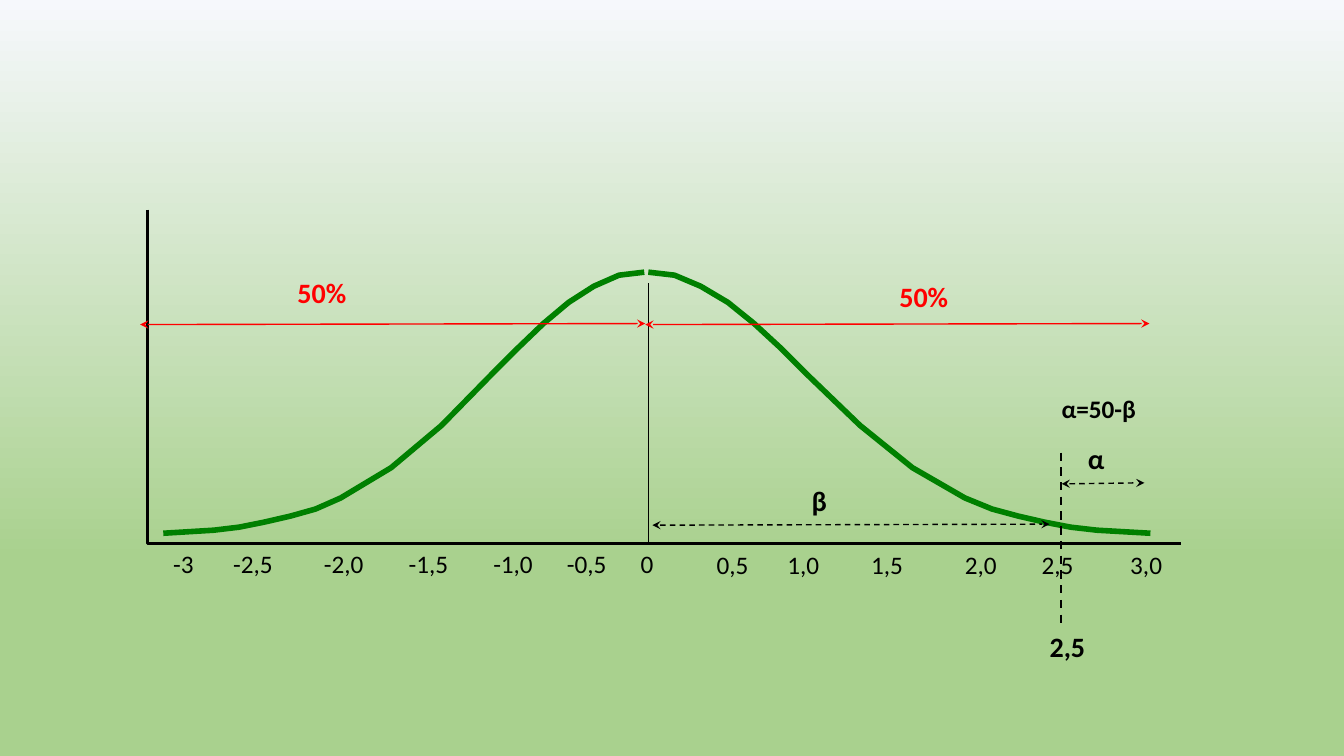
from lxml.etree import SubElement
from pptx import Presentation
from pptx.dml.color import RGBColor
from pptx.enum.dml import MSO_LINE
from pptx.enum.shapes import MSO_CONNECTOR
from pptx.enum.text import MSO_AUTO_SIZE as AutoSize, PP_ALIGN
from pptx.oxml.ns import qn
from pptx.util import Inches, Pt

COLORS = {"black": "000000", "red": "FF0000", "curve": "008000",
          "sky": "F6F8FC", "meadow": "A9D18E"}

# Places are columns and rows of a grid with square cells.
CELL = 0.1
AXIS_COLUMN, AXIS_ROW, CENTER = 14.6, 53.9, 64.3

# Half of the bell: steps away from the centre, and the row at each step.
BELL = [(0, 27), (1, 27.3), (2, 28.4), (3, 30), (4, 32.1), (5, 34.5),
        (6, 37.1), (8, 42.2), (10, 46.4), (12, 49.4), (13, 50.5),
        (14, 51.2), (15, 51.8), (16, 52.3), (17, 52.6), (19, 52.9)]
HALVES = [(64.3, 2.62), (63.9, -2.51)]  # start column, columns per step

# Box, labels, and centre columns of every label after the first.
SCALES = [
    ((16.2, 53.9, 54, 4), ["-3", "-2,5", "-2,0", "-1,5", "-1,0", "-0,5", "0"],
     [25.1, 34.1, 42.5, 50.9, 58.2, 64.2]),
    ((70.1, 54, 49.3, 4), ["0,5", "1,0", "1,5", "2,0", "2,5", "3,0"],
     [79.7, 88, 97.3, 104.9, 113.7]),
]
MARKS = [
    ("2,5", (104.1, 62.4, 5.5, 3.6), "black"),
    ("β", (80.5, 47.9, 2.8, 3.5), "black"),
    ("α", (107.9, 43.7, 2.8, 3.5), "black"),
    ("50%", (89.2, 27.6, 7.3, 3.6), "red"),
    ("50%", (29.5, 27.2, 7.3, 3.6), "red"),
]
ARROWS = [
    ((64.7, 52.1), (104.1, 52), "black", True),
    ((64, 32.2), (114, 32.1), "red", False),
    ((13.9, 32.2), (64, 32.1), "red", False),
    ((105.3, 48), (113.5, 47.9), "black", True),
]


def grid(*cells):
    return [Inches(round(cell * CELL, 2)) for cell in cells]


def rgb(name):
    return RGBColor.from_string(COLORS[name])


def set_all(target, values):
    for name, value in values.items():
        setattr(target, name, value)


def set_line(line, color, width):
    line.color.rgb = rgb(color)
    line.width = Pt(width)


def set_background(slide):
    fill = slide.background.fill
    fill.gradient()
    fill.gradient_angle = 270
    for stop, color, position in zip(fill.gradient_stops,
                                     ("sky", "meadow"), (0, 0.74)):
        stop.color.rgb = rgb(color)
        stop.position = position


def add_polyline(slide, points, color, width):
    corners = [grid(*point) for point in points]
    builder = slide.shapes.build_freeform(*corners[0], scale=1.0)
    builder.add_line_segments(corners[1:], close=False)
    shape = builder.convert_to_shape()
    shape.shadow.inherit = False
    shape.fill.background()
    set_line(shape.line, color, width)


def add_line(slide, start, end, color="black", width=1, dashed=False, arrows=False):
    connector = slide.shapes.add_connector(
        MSO_CONNECTOR.STRAIGHT, *grid(*start, *end))
    set_line(connector.line, color, width)
    if dashed:
        connector.line.dash_style = MSO_LINE.DASH
    if arrows:
        for end_tag in ("a:headEnd", "a:tailEnd"):
            SubElement(connector.line._get_or_add_ln(), qn(end_tag), type="stealth")
    SubElement(connector._element.spPr, qn("a:effectLst"))


def add_text(slide, text, box, color="black", size=18, bold=False):
    """Add one line of text and return its frame and paragraph."""
    frame = slide.shapes.add_textbox(*grid(*box)).text_frame
    set_all(frame, {"word_wrap": True, "auto_size": AutoSize.SHAPE_TO_FIT_TEXT})
    paragraph = frame.paragraphs[0]
    run = paragraph.add_run()
    run.text = text
    set_all(run.font, {"name": "Calibri", "size": Pt(size), "bold": bold})
    run.font.color.rgb = rgb(color)
    return frame, paragraph


def add_mark(slide, text, box, color):
    frame, paragraph = add_text(slide, text, box, color, size=20, bold=True)
    set_all(frame, {"margin_left": 0, "margin_right": 0,
                    "margin_top": Inches(0.01), "margin_bottom": 0})
    paragraph.space_before = Pt(0.9)


def add_scale(slide, box, labels, centers):
    """Add a row of axis labels, each centred on its tab stop."""
    frame, paragraph = add_text(slide, "\t".join(labels), box)
    tabs = SubElement(paragraph._p.get_or_add_pPr(), qn("a:tabLst"))
    text_left = grid(box[0])[0] + frame.margin_left
    for center in centers:
        SubElement(tabs, qn("a:tab"), pos=str(grid(center)[0] - text_left), algn="ctr")


def main():
    presentation = Presentation()
    set_all(presentation, {"slide_width": Inches(13.33), "slide_height": Inches(7.5)})
    slide = presentation.slides.add_slide(presentation.slide_layouts[6])
    set_background(slide)

    add_polyline(slide, [(AXIS_COLUMN, 20.8), (AXIS_COLUMN, AXIS_ROW),
                         (117.1, AXIS_ROW)], "black", 2)
    for start, step in HALVES:
        add_polyline(slide, [(start + count * step, row) for count, row in BELL],
                     "curve", 4)
    add_line(slide, (CENTER, 28.1), (CENTER, AXIS_ROW))
    add_line(slide, (105.2, 44.9), (105.2, 62.1), width=1.5, dashed=True)
    for start, end, color, dashed in ARROWS:
        add_line(slide, start, end, color, dashed=dashed, arrows=True)

    for box, labels, centers in SCALES:
        add_scale(slide, box, labels, centers)
    for text, box, color in MARKS:
        add_mark(slide, text, box, color)
    formula = add_text(slide, "α=50-β", (104.3, 38.5, 10.2, 4), bold=True)[1]
    formula.alignment = PP_ALIGN.JUSTIFY
    presentation.save("out.pptx")


if __name__ == "__main__":
    main()
